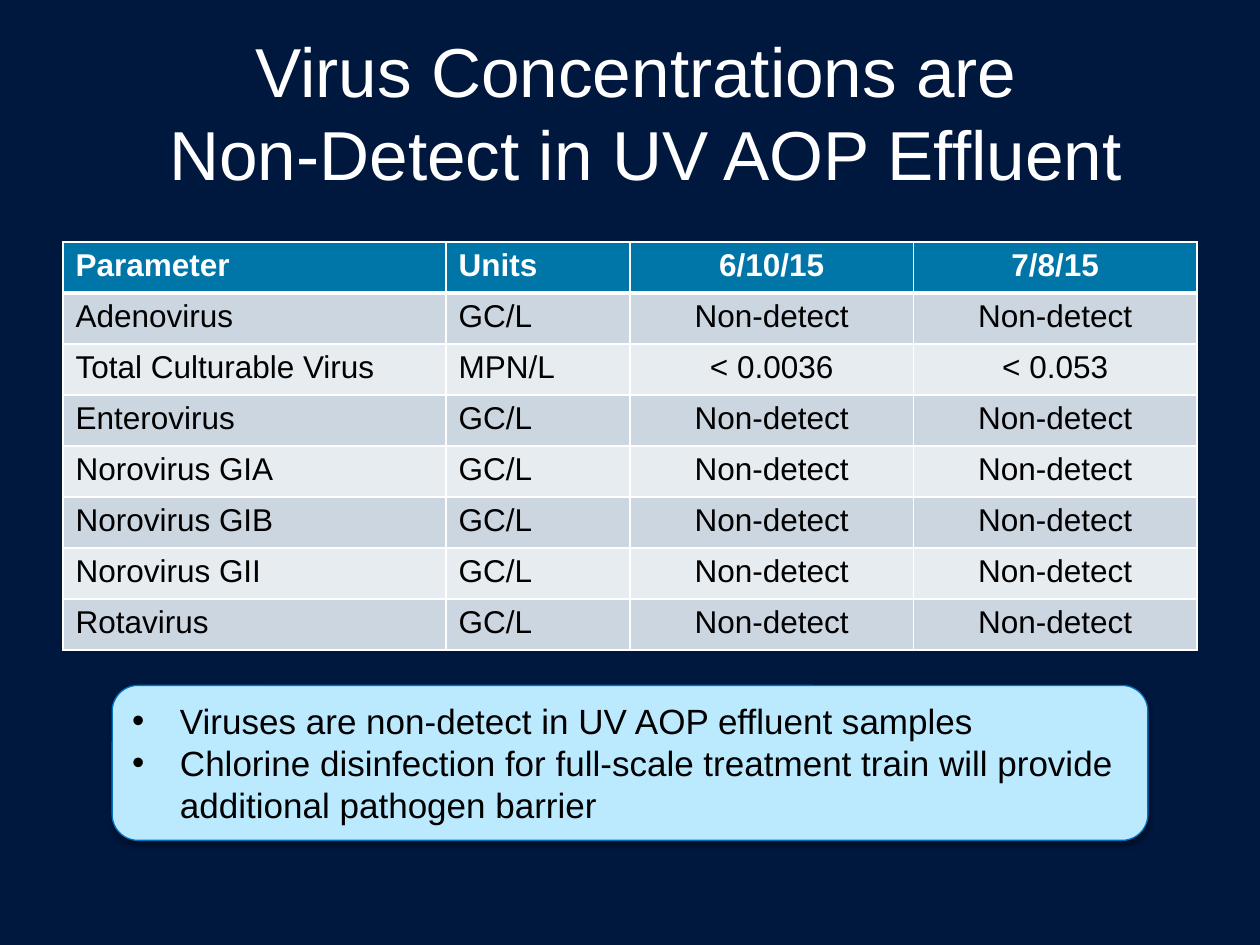
from lxml import etree
from pptx import Presentation
from pptx.dml.color import RGBColor
from pptx.enum.shapes import MSO_SHAPE
from pptx.enum.text import MSO_ANCHOR, PP_ALIGN
from pptx.oxml import parse_xml
from pptx.oxml.ns import nsdecls, qn
from pptx.util import Inches, Pt

LEFT, CENTER = PP_ALIGN.LEFT, PP_ALIGN.CENTER
TOP, MIDDLE = MSO_ANCHOR.TOP, MSO_ANCHOR.MIDDLE
ROUNDED = MSO_SHAPE.ROUNDED_RECTANGLE

FONT = "Arial"
NAVY, WHITE, BLACK = "00173E", "FFFFFF", "000000"
HEADER_FILL, BAND_FILLS = "0075A8", ("CCD6E1", "E7ECF1")
CALLOUT_FILL, CALLOUT_LINE = "BBEAFF", "0070C0"

TITLE = "Virus Concentrations are \vNon-Detect in UV AOP Effluent"
COLUMN_WIDTHS = (3.04, 1.46, 2.25, 2.25)
COLUMN_ALIGNS = (LEFT, LEFT, CENTER, CENTER)
ROW_HEIGHT = 0.405
ND = "Non-detect"
RESULTS = (
    ("Parameter", "Units", "6/10/15", "7/8/15"),
    ("Adenovirus", "GC/L", ND, ND),
    ("Total Culturable Virus", "MPN/L", "< 0.0036", "< 0.053"),
    ("Enterovirus", "GC/L", ND, ND),
    ("Norovirus GIA", "GC/L", ND, ND),
    ("Norovirus GIB", "GC/L", ND, ND),
    ("Norovirus GII", "GC/L", ND, ND),
    ("Rotavirus", "GC/L", ND, ND),
)
FINDINGS = (
    "Viruses are non-detect in UV AOP effluent samples",
    "Chlorine disinfection for full-scale treatment train will provide "
    "additional pathogen barrier",
)


def color(hex_code):
    """Return the colour for a hex string."""
    return RGBColor.from_string(hex_code)


def fill_solid(fill, hex_code):
    """Give a fill one solid colour."""
    fill.solid()
    fill.fore_color.rgb = color(hex_code)


def write(paragraph, text, *, size, ink=BLACK, bold=False, align=LEFT,
          line_spacing=None, bullet_indent=None):
    """Write formatted text into a paragraph."""
    paragraph.text = text
    paragraph.alignment = align
    if line_spacing:
        paragraph.line_spacing = Pt(line_spacing)
    if bullet_indent:
        properties = paragraph._p.get_or_add_pPr()
        properties.set("marL", str(Inches(bullet_indent)))
        properties.set("indent", str(-Inches(bullet_indent)))
        etree.SubElement(properties, qn("a:buFont"), typeface=FONT)
        etree.SubElement(properties, qn("a:buChar"), char="•")
    for part in (paragraph, *paragraph.runs):
        part.font.name = FONT
        part.font.size = Pt(size)
        part.font.bold = bold
        part.font.color.rgb = color(ink)


def add_title(slide):
    """Place and fill the title."""
    title = slide.shapes.title
    title.left, title.top = Inches(0.59), Inches(0.22)
    title.width, title.height = Inches(9.07), Inches(0.69)
    frame = title.text_frame
    frame.margin_left = frame.margin_right = 0
    frame.margin_top = frame.margin_bottom = 0
    frame.vertical_anchor = TOP
    frame.word_wrap = True
    write(frame.paragraphs[0], TITLE, size=39.6, ink=WHITE, align=CENTER,
          line_spacing=47.5)


def set_borders(cell, top, bottom):
    """Draw white cell borders, with top and bottom widths in points."""
    properties = cell._tc.get_or_add_tcPr()
    for index, (side, width) in enumerate(
            (("L", 1), ("R", 1), ("T", top), ("B", bottom))):
        properties.insert(index, parse_xml(
            f'<a:ln{side} {nsdecls("a")} w="{Pt(width)}"><a:solidFill>'
            f'<a:srgbClr val="{WHITE}"/></a:solidFill></a:ln{side}>'))


def add_results(slide):
    """Add the table of virus results."""
    table = slide.shapes.add_table(
        len(RESULTS), len(COLUMN_WIDTHS), Inches(0.5), Inches(1.92),
        Inches(sum(COLUMN_WIDTHS)), Inches(ROW_HEIGHT * len(RESULTS))).table
    for column, width in zip(table.columns, COLUMN_WIDTHS):
        column.width = Inches(width)
    for row_index, values in enumerate(RESULTS):
        header = row_index == 0
        table.rows[row_index].height = Inches(ROW_HEIGHT)
        background = HEADER_FILL if header else BAND_FILLS[(row_index - 1) % 2]
        for column_index, value in enumerate(values):
            cell = table.cell(row_index, column_index)
            fill_solid(cell.fill, background)
            set_borders(cell, top=3 if row_index == 1 else 1,
                        bottom=3 if header else 1)
            write(cell.text_frame.paragraphs[0], value, size=18, bold=header,
                  ink=WHITE if header else BLACK,
                  align=COLUMN_ALIGNS[column_index])


def add_shadow(shape, blur, distance, opacity):
    """Give a shape a soft shadow straight below it."""
    shape.shadow.inherit = False
    effects = shape._element.spPr.find(qn("a:effectLst"))
    effects.append(parse_xml(
        f'<a:outerShdw {nsdecls("a")} blurRad="{Pt(blur)}" '
        f'dist="{Pt(distance)}" dir="5400000" rotWithShape="0">'
        f'<a:srgbClr val="{BLACK}"><a:alpha val="{opacity * 1000}"/>'
        '</a:srgbClr></a:outerShdw>'))


def add_callout(slide):
    """Add the rounded box of findings."""
    callout = slide.shapes.add_shape(
        ROUNDED, Inches(0.89), Inches(5.44), Inches(8.22), Inches(1.23))
    fill_solid(callout.fill, CALLOUT_FILL)
    callout.line.color.rgb = color(CALLOUT_LINE)
    callout.line.width = Pt(0.75)
    add_shadow(callout, blur=3.1, distance=1.6, opacity=38)
    frame = callout.text_frame
    frame.word_wrap = True
    frame.vertical_anchor = MIDDLE
    for index, finding in enumerate(FINDINGS):
        paragraph = frame.add_paragraph() if index else frame.paragraphs[0]
        write(paragraph, finding, size=20, bullet_indent=0.38)


def main():
    """Build and save the slide."""
    deck = Presentation()
    deck.slide_width, deck.slide_height = Inches(10), Inches(7.5)
    slide = deck.slides.add_slide(deck.slide_layouts[5])
    fill_solid(slide.background.fill, NAVY)
    add_title(slide)
    add_results(slide)
    add_callout(slide)
    deck.save("out.pptx")


if __name__ == "__main__":
    main()
